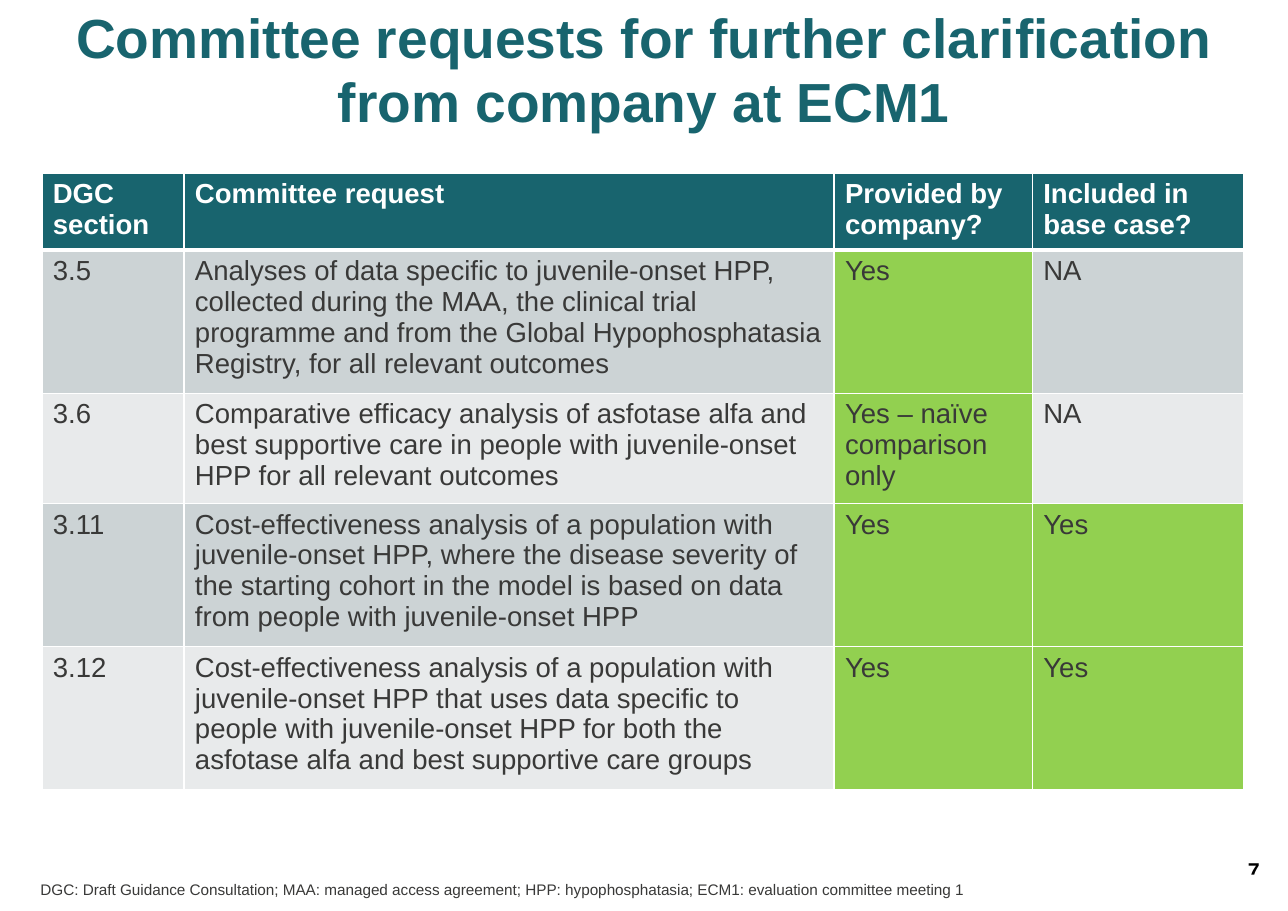
from lxml.etree import SubElement
from pptx import Presentation
from pptx.dml.color import RGBColor
from pptx.enum.shapes import MSO_SHAPE
from pptx.enum.text import MSO_ANCHOR, PP_ALIGN
from pptx.oxml.ns import qn
from pptx.util import Inches, Pt

WIDE, HIGH = 11.69, 8.27
TEAL, WHITE, INK, GREEN = "18646E", "FFFFFF", "393938", "92D050"
BANDS = ["CCD3D5", "E8EAEB"]

TITLE = "Committee requests for further clarification from company at ECM1"
PAGE = "7"
NOTE = ("DGC: Draft Guidance Consultation; MAA: managed access agreement; "
        "HPP: hypophosphatasia; ECM1: evaluation committee meeting 1")
ROWS = [
    ("DGC section", "Committee request", "Provided by company?", "Included in base case?"),
    ("3.5", "Analyses of data specific to juvenile-onset HPP, collected during the MAA, "
     "the clinical trial programme and from the Global Hypophosphatasia Registry, "
     "for all relevant outcomes", "Yes", "NA"),
    ("3.6", "Comparative efficacy analysis of asfotase alfa and best supportive care "
     "in people with juvenile-onset HPP for all relevant outcomes",
     "Yes – naïve comparison only", "NA"),
    ("3.11", "Cost-effectiveness analysis of a population with juvenile-onset HPP, "
     "where the disease severity of the starting cohort in the model is based on data "
     "from people with juvenile-onset HPP", "Yes", "Yes"),
    ("3.12", "Cost-effectiveness analysis of a population with juvenile-onset HPP "
     "that uses data specific to people with juvenile-onset HPP for both the "
     "asfotase alfa and best supportive care groups", "Yes", "Yes"),
]
COLS = [1.29, 5.9, 1.8, 1.92]
TALL = [0.65, 1.22, 0.99, 1.22, 1.22]

FORMS = {
    "title": ({"size": Pt(36), "bold": True}, TEAL,
              {"alignment": PP_ALIGN.CENTER, "line_spacing": Pt(42)}),
    "page": ({"size": Pt(14), "bold": True}, "000000", {"alignment": PP_ALIGN.CENTER}),
    "head": ({"size": Pt(18), "bold": True}, WHITE, {}),
    "body": ({"size": Pt(18), "bold": False}, INK, {}),
    "note": ({"size": Pt(10), "bold": False}, INK,
             {"alignment": PP_ALIGN.LEFT, "space_after": Pt(3)}),
}


def tint(part, code):
    part.rgb = RGBColor.from_string(code)


def paint(fill, code):
    fill.solid()
    tint(fill.fore_color, code)


def put(frame, text, form):
    font, code, para = FORMS[form]
    frame.word_wrap = True
    line = frame.paragraphs[0]
    run = line.add_run()
    run.text = text
    for key, val in para.items():
        setattr(line, key, val)
    for key, val in {"name": "Arial", **font}.items():
        setattr(run.font, key, val)
    tint(run.font.color, code)


def edge(cell, side, width):
    line = SubElement(cell._tc.get_or_add_tcPr(), qn("a:ln" + side), w=str(Pt(width)))
    SubElement(SubElement(line, qn("a:solidFill")), qn("a:srgbClr"), val=WHITE)


def place(x, y, w, h):
    return [Inches(n) for n in (x * WIDE, y * HIGH, w * WIDE, h * HIGH)]


def shade(row, text):
    if row == 0:
        return TEAL
    return GREEN if text.startswith("Yes") else BANDS[(row - 1) % 2]


def main():
    deck = Presentation()
    deck.slide_width, deck.slide_height = Inches(WIDE), Inches(HIGH)
    slide = deck.slides.add_slide(deck.slide_layouts[6])
    shapes = slide.shapes

    put(shapes.add_textbox(*place(0.02, 0, 0.96, 0.17)).text_frame, TITLE, "title")

    frame = shapes.add_textbox(*place(0.95, 0.925, 0.047, 0.044)).text_frame
    inset = {"margin_" + side: 0 for side in ("left", "right", "top", "bottom")}
    for key, val in {**inset, "vertical_anchor": MSO_ANCHOR.BOTTOM}.items():
        setattr(frame, key, val)
    put(frame, PAGE, "page")

    spot = Inches(0.38), Inches(1.57), Inches(sum(COLS)), Inches(sum(TALL))
    table = shapes.add_table(len(ROWS), len(COLS), *spot).table
    for col, width in zip(table.columns, COLS):
        col.width = Inches(width)
    for r, (row, height) in enumerate(zip(ROWS, TALL)):
        table.rows[r].height = Inches(height)
        for c, text in enumerate(row):
            cell = table.cell(r, c)
            put(cell.text_frame, text, "body" if r else "head")
            rims = {"L": 1, "R": 1, "T": 3 if r == 1 else 1, "B": 1 if r else 3}
            for side, width in rims.items():
                edge(cell, side, width)
            paint(cell.fill, shade(r, text))

    strip = shapes.add_shape(MSO_SHAPE.RECTANGLE, *place(0.023, 0.96, 0.96, 0.033))
    strip.shadow.inherit = False
    paint(strip.fill, WHITE)
    strip.line.fill.background()
    strip.text_frame.vertical_anchor = MSO_ANCHOR.TOP
    put(strip.text_frame, NOTE, "note")

    deck.save("out.pptx")


if __name__ == "__main__":
    main()
